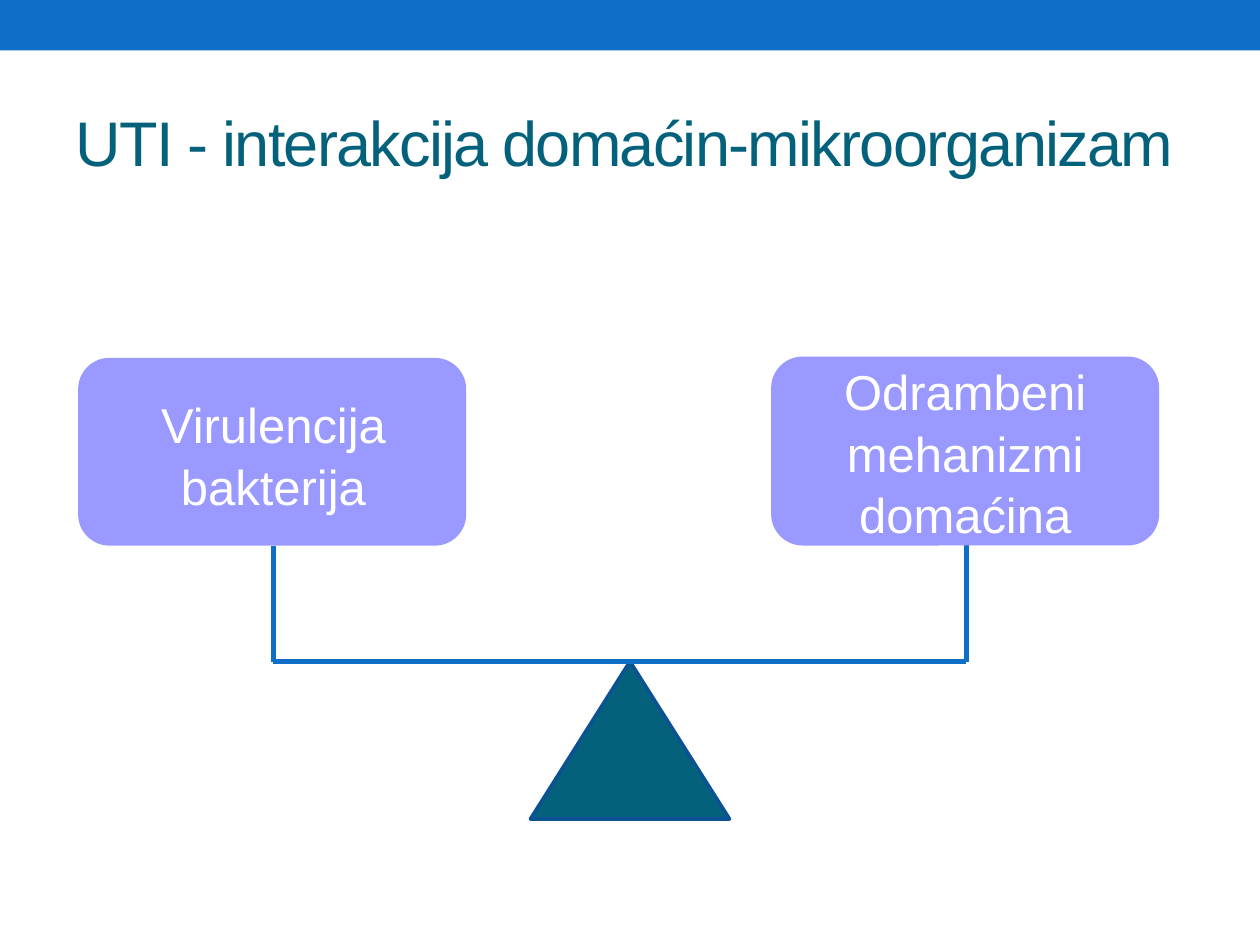
"""Build a slide showing the host and microorganism balance in UTI."""
import pptx
import pptx.util
from pptx.dml.color import RGBColor
from pptx.enum.shapes import MSO_CONNECTOR, MSO_SHAPE
from pptx.enum.text import MSO_ANCHOR, PP_ALIGN
from pptx.oxml.ns import qn
from pptx.util import Inches
from lxml import etree

BLUE = RGBColor(0x0F, 0x6F, 0xC6)
DARK_BLUE = RGBColor(0x0B, 0x52, 0x92)
TEAL = RGBColor(0x04, 0x61, 0x7B)
LILAC = RGBColor(0x99, 0x99, 0xFF)
WHITE = RGBColor(0xFF, 0xFF, 0xFF)


def add_filled(s, kind, box, color):
    sp = s.shapes.add_shape(kind, *map(Inches, box))
    sp.shadow.inherit = False
    sp.fill.solid()
    sp.fill.fore_color.rgb = color
    sp.line.fill.background()
    return sp


def write_label(sp, text):
    tf = sp.text_frame
    tf.word_wrap = True
    p = tf.paragraphs[0]
    p.text = text
    p.alignment = PP_ALIGN.CENTER
    p.line_spacing = 1.05
    p.font.name = "Arial"
    p.font.size = pptx.util.Pt(28)
    p.font.color.rgb = WHITE


prs = pptx.Presentation()
prs.slide_width = Inches(10)
prs.slide_height = Inches(7.5)
s = prs.slides.add_slide(prs.slide_layouts[5])

add_filled(s, MSO_SHAPE.RECTANGLE, (0, 0, 10, 0.4), BLUE)

title = s.shapes.title
title.left, title.top = Inches(0.5), Inches(0.58)
title.width, title.height = Inches(9), Inches(1.08)
tf = title.text_frame
tf.vertical_anchor = MSO_ANCHOR.MIDDLE
p = tf.paragraphs[0]
p.alignment = PP_ALIGN.LEFT
r = p.add_run()
r.text = "UTI - interakcija domaćin-mikroorganizam"
r.font.name = "Arial"
r.font.size = pptx.util.Pt(36)
r.font.color.rgb = TEAL
r.font._element.set("spc", "-100")

fulcrum = add_filled(s, MSO_SHAPE.ISOSCELES_TRIANGLE, (4.21, 5.25, 1.58, 1.25), TEAL)
fulcrum.line.color.rgb = DARK_BLUE
fulcrum.line.width = pptx.util.Pt(2.08)

LEFT_X, RIGHT_X, BEAM_Y = 2.17, 7.67, 5.25
for ends in [
    (LEFT_X, BEAM_Y, RIGHT_X, BEAM_Y),
    (RIGHT_X, BEAM_Y, RIGHT_X, 4.25),
    (LEFT_X, BEAM_Y, LEFT_X, 4.33),
]:
    line = s.shapes.add_connector(MSO_CONNECTOR.STRAIGHT, *map(Inches, ends))
    line.line.color.rgb = BLUE
    line.line.width = pptx.util.Pt(3)
    etree.SubElement(line._element.spPr, qn("a:effectLst"))

add_filled(s, MSO_SHAPE.ROUNDED_RECTANGLE, (0.62, 2.84, 3.08, 1.49), LILAC)
label = s.shapes.add_textbox(Inches(0.71), Inches(3.06), Inches(2.92), Inches(1.04))
write_label(label, "Virulencija bakterija")

host = add_filled(s, MSO_SHAPE.ROUNDED_RECTANGLE, (6.12, 2.83, 3.08, 1.5), LILAC)
host.text_frame.vertical_anchor = MSO_ANCHOR.MIDDLE
write_label(host, "Odrambeni mehanizmi domaćina")

prs.save("out.pptx")
